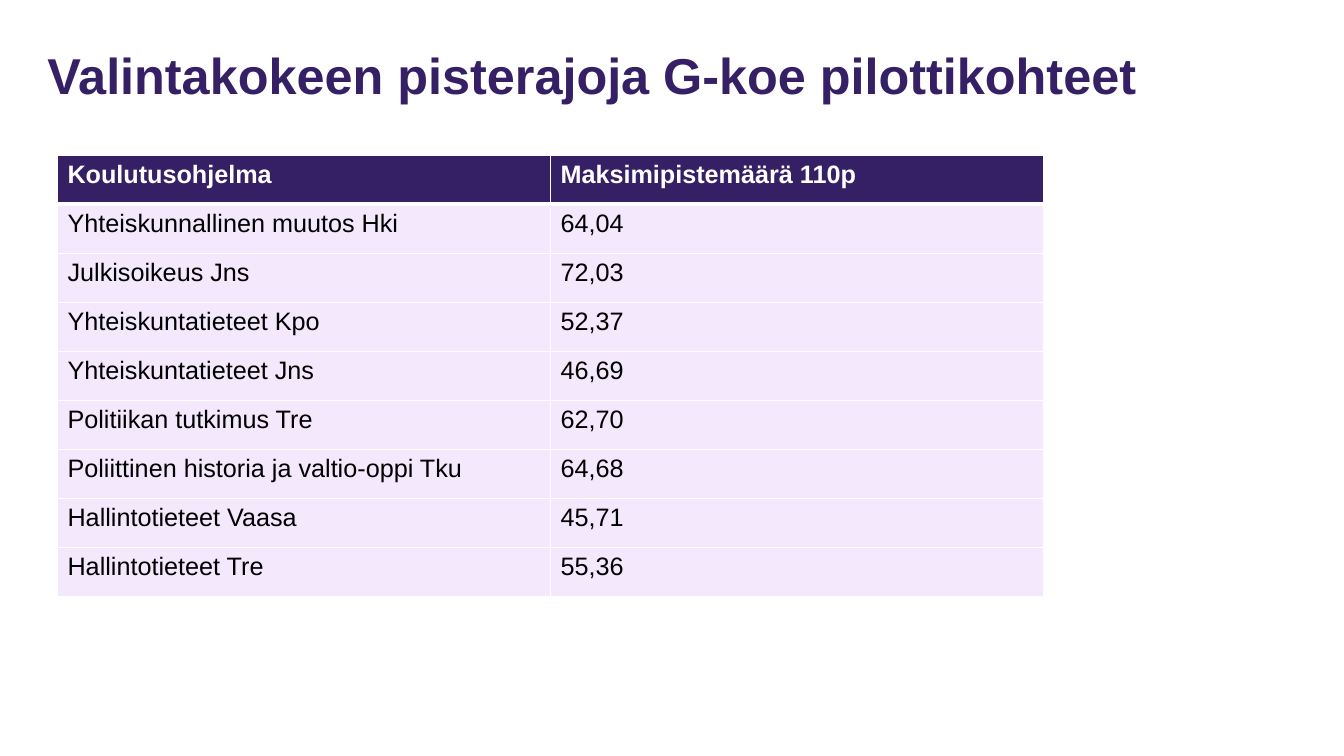
from lxml import etree
from pptx import Presentation
from pptx.dml.color import RGBColor
from pptx.enum import text
from pptx.oxml.ns import qn
from pptx.util import Inches, Pt

TITLE = "Valintakokeen pisterajoja G-koe pilottikohteet"
ROWS = [
    ("Koulutusohjelma", "Maksimipistemäärä 110p"),
    ("Yhteiskunnallinen muutos Hki", "64,04"),
    ("Julkisoikeus Jns", "72,03"),
    ("Yhteiskuntatieteet Kpo", "52,37"),
    ("Yhteiskuntatieteet Jns", "46,69"),
    ("Politiikan tutkimus Tre", "62,70"),
    ("Poliittinen historia ja valtio-oppi Tku", "64,68"),
    ("Hallintotieteet Vaasa", "45,71"),
    ("Hallintotieteet Tre", "55,36"),
]
PURPLE, LILAC, WHITE, BLACK = "351F65", "F3E8FC", "FFFFFF", "000000"
TITLE_FONT = {"name": "Arial", "size": Pt(36), "bold": True}
HEADER_FONT = {"name": "Arial", "size": Pt(18), "bold": True}
BODY_FONT = {**HEADER_FONT, "bold": False}
COLUMN_WIDTH, ROW_HEIGHT = 4.89, 0.4865


def color(value):
    return RGBColor.from_string(value)


def write(para, words, font, ink):
    span = para.add_run()
    span.text = words
    for name, value in font.items():
        setattr(span.font, name, value)
    span.font.color.rgb = color(ink)


def add_borders(cell, widths):
    """Draw white cell borders; widths maps L, R, T, B to points."""
    properties = cell._tc.get_or_add_tcPr()
    for side, width in widths.items():
        line = etree.SubElement(properties, qn(f"a:ln{side}"), w=str(Pt(width)))
        fill = etree.SubElement(line, qn("a:solidFill"))
        etree.SubElement(fill, qn("a:srgbClr"), val=WHITE)


deck = Presentation()
deck.slide_width, deck.slide_height = Inches(13.33), Inches(7.5)
page = deck.slides.add_slide(deck.slide_layouts[5])

title = page.shapes.title
title.left, title.top = Inches(0.37), Inches(0.4)
title.width, title.height = Inches(12.53), Inches(0.76)
title.text_frame.vertical_anchor = text.MSO_ANCHOR.MIDDLE
heading = title.text_frame.paragraphs[0]
heading.alignment = text.PP_ALIGN.LEFT
heading.line_spacing = 0.9
write(heading, TITLE, TITLE_FONT, PURPLE)

table = page.shapes.add_table(
    len(ROWS), len(ROWS[0]), Inches(0.57), Inches(1.54),
    Inches(COLUMN_WIDTH * len(ROWS[0])), Inches(ROW_HEIGHT * len(ROWS))).table
for r, row in enumerate(ROWS):
    header = r == 0
    for c, words in enumerate(row):
        cell = table.cell(r, c)
        add_borders(cell, {"L": 1, "R": 1, "T": 3 if r == 1 else 1,
                           "B": 3 if header else 1})
        cell.fill.solid()
        cell.fill.fore_color.rgb = color(PURPLE if header else LILAC)
        write(cell.text_frame.paragraphs[0], words,
              HEADER_FONT if header else BODY_FONT, WHITE if header else BLACK)

deck.save("out.pptx")
